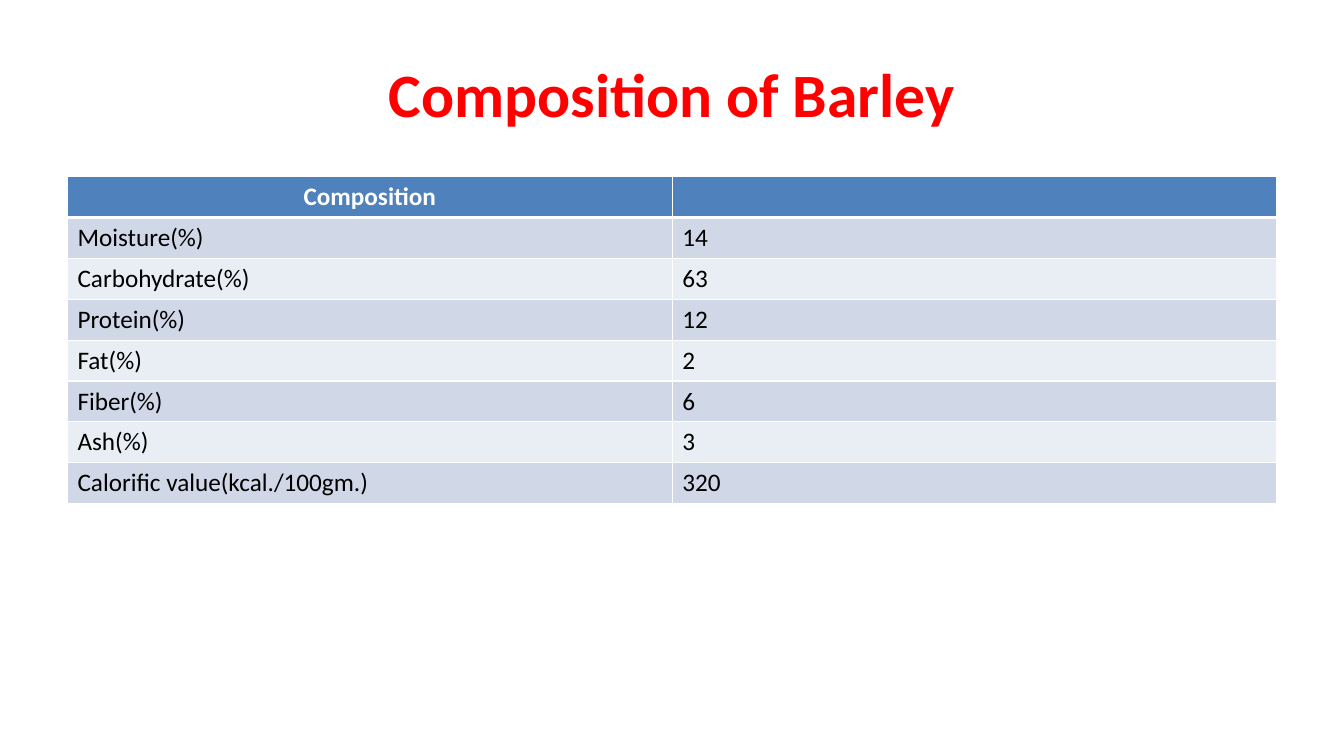
from lxml.etree import SubElement
from pptx import Presentation
from pptx.dml.color import RGBColor
from pptx.enum.text import MSO_ANCHOR as Anchor, PP_ALIGN as Align
from pptx.oxml.ns import qn
from pptx.util import Cm, Pt

ROWS = [
    ("Composition", ""),
    ("Moisture(%)", "14"),
    ("Carbohydrate(%)", "63"),
    ("Protein(%)", "12"),
    ("Fat(%)", "2"),
    ("Fiber(%)", "6"),
    ("Ash(%)", "3"),
    ("Calorific value(kcal./100gm.)", "320"),
]
HEADER, BANDS = "4F81BD", ("E9EDF4", "D0D8E8")


def rgb(value):
    return RGBColor.from_string(value)


def write(tf, text, size=18, color="000000", bold=False, align=Align.LEFT):
    p = tf.paragraphs[0]
    p.alignment = align
    p.font.size = Pt(size)
    if text:
        r = p.add_run()
        r.text = text
        r.font.name = "Calibri"
        r.font.size = Pt(size)
        r.font.bold = bold
        r.font.color.rgb = rgb(color)


def set_borders(cell, color="FFFFFF", **widths):
    tc_pr = cell._tc.get_or_add_tcPr()
    for side, width in widths.items():
        ln = SubElement(tc_pr, qn(f"a:ln{side}"), w=str(Pt(width)))
        fill = SubElement(ln, qn("a:solidFill"))
        SubElement(fill, qn("a:srgbClr"), val=color)


def add_title(s, left, top, width, height):
    sp = s.shapes.title
    sp.left, sp.top, sp.width, sp.height = left, top, width, height
    tf = sp.text_frame
    tf.vertical_anchor = Anchor.MIDDLE
    write(tf, "Composition of Barley", size=44, color="FF0000", bold=True,
          align=Align.CENTER)


def add_composition(s, left, top, width, height):
    table = s.shapes.add_table(len(ROWS), 2, left, top, width, height).table
    for i, row in enumerate(ROWS):
        for j, text in enumerate(row):
            cell = table.cell(i, j)
            set_borders(cell, L=1, R=1, T=3 if i == 1 else 1,
                        B=3 if i == 0 else 1)
            cell.fill.solid()
            cell.fill.fore_color.rgb = rgb(BANDS[i % 2] if i else HEADER)
            if i:
                write(cell.text_frame, text)
            else:
                write(cell.text_frame, text, color="FFFFFF", bold=True,
                      align=Align.CENTER)


def main():
    prs = Presentation()
    prs.slide_width, prs.slide_height = Cm(33.87), Cm(19.05)
    s = prs.slides.add_slide(prs.slide_layouts[5])
    left, width = Cm(1.7), Cm(30.48)
    add_title(s, left, Cm(0.76), width, Cm(3.18))
    add_composition(s, left, Cm(4.45), width, Cm(1.03) * len(ROWS))
    prs.save("out.pptx")


if __name__ == "__main__":
    main()
